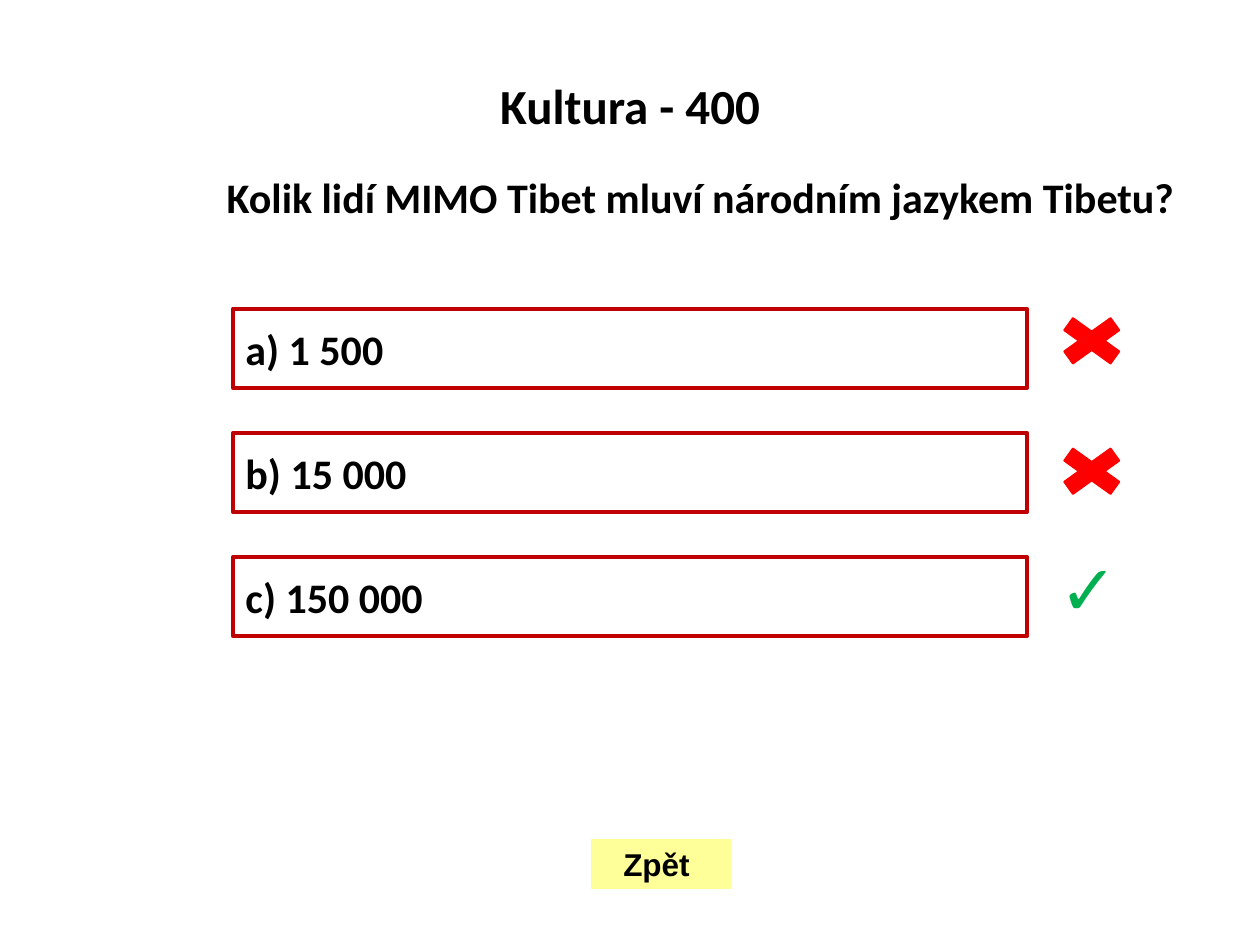
from pptx import Presentation
from pptx.dml.color import RGBColor
from pptx.enum.shapes import MSO_SHAPE
from pptx.enum.text import MSO_ANCHOR, PP_ALIGN
from pptx.util import Inches, Pt

BUTTON = MSO_SHAPE.ACTION_BUTTON_CUSTOM
CROSS = MSO_SHAPE.MATH_MULTIPLY
LEFT, CENTER = PP_ALIGN.LEFT, PP_ALIGN.CENTER
TOP, MIDDLE = MSO_ANCHOR.TOP, MSO_ANCHOR.MIDDLE

BLACK, RED, DARK_RED = "000000", "FF0000", "C00000"
GREEN, YELLOW = "00B050", "FFFF99"
ANSWERS = [("a) 1 500", False), ("b) 15 000", False), ("c) 150 000", True)]


def rgb(value):
    """Turn a hex string into a colour."""
    return RGBColor.from_string(value)


def inches(box):
    """Convert a left, top, width, height box to lengths."""
    return [Inches(length) for length in box]


def write(holder, text, size, font="Calibri", color=BLACK, align=LEFT, anchor=TOP, wrap=True):
    """Put one bold paragraph into a shape and return the paragraph."""
    frame = holder.text_frame
    frame.text = text
    frame.word_wrap = wrap
    frame.vertical_anchor = anchor
    paragraph = frame.paragraphs[0]
    paragraph.alignment = align
    style = paragraph.runs[0].font
    style.name, style.size, style.bold = font, Pt(size), True
    style.color.rgb = rgb(color)
    return paragraph


def add_box(slide, kind, box, fill=None, line=None, width=1):
    """Add a flat preset shape with an optional fill and outline."""
    shape = slide.shapes.add_shape(kind, *inches(box))
    shape.shadow.inherit = False
    if fill:
        shape.fill.solid()
        shape.fill.fore_color.rgb = rgb(fill)
    else:
        shape.fill.background()
    if line:
        shape.line.color.rgb = rgb(line)
        shape.line.width = Pt(width)
    else:
        shape.line.fill.background()
    return shape


def add_heading(slide, box):
    """Place the category and value of the question in the title."""
    title = slide.shapes.title
    title.left, title.top, title.width, title.height = inches(box)
    paragraph = write(title, "Kultura - 400", 28, align=CENTER)
    paragraph.line_spacing = 0.9
    paragraph.space_before = Pt(10)


def add_question(slide, box):
    """Add the question line."""
    question = slide.shapes.add_textbox(*inches(box))
    write(question, "Kolik lidí MIMO Tibet mluví národním jazykem Tibetu?", 24, align=CENTER)


def add_answers(slide, box, pitch=0.985):
    """Stack the answer buttons, each with its mark on the right."""
    left, top, width, height = box
    mark_left = left + width + 0.16
    for row, (answer, correct) in enumerate(ANSWERS):
        y = top + row * pitch
        button = add_box(slide, BUTTON, (left, y, width, height), line=DARK_RED, width=2.25)
        write(button, answer, 24, anchor=MIDDLE, wrap=False)
        if correct:
            tick = slide.shapes.add_textbox(*inches((mark_left, y - 0.14, 0.71, 0.77)))
            write(tick, "✓", 40, "Arial", GREEN)
        else:
            add_box(slide, CROSS, (mark_left, y + row * 0.05, 0.71, 0.51), RED, RED)


def add_back_button(slide, box):
    """Add the button that leads back to the board."""
    button = add_box(slide, BUTTON, box, YELLOW)
    write(button, "Zpět ", 18, "Arial", align=CENTER, anchor=MIDDLE, wrap=False)


def main():
    """Build and save the quiz slide."""
    deck = Presentation()
    deck.slide_width, deck.slide_height = Inches(10), Inches(7.5)
    slide = deck.slides.add_slide(deck.slide_layouts[5])
    add_heading(slide, (0, 0.6, 10, 0.79))
    add_question(slide, (1.69, 1.31, 7.74, 0.5))
    add_answers(slide, (1.85, 2.45, 6.3, 0.63))
    add_back_button(slide, (4.69, 6.66, 1.11, 0.4))
    deck.save("out.pptx")


if __name__ == "__main__":
    main()
